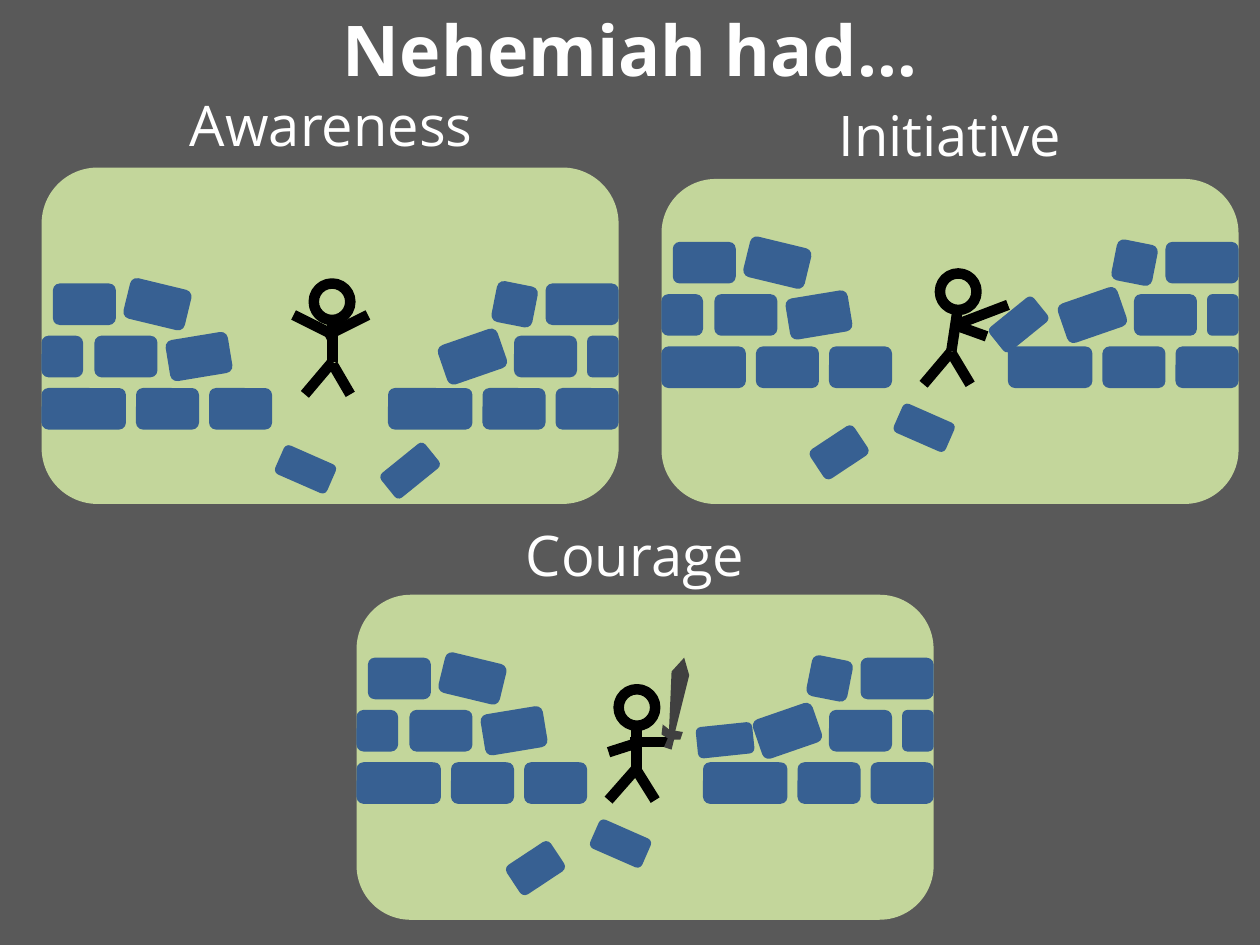
from dataclasses import dataclass

from lxml.etree import SubElement
from pptx import Presentation
from pptx.dml.color import RGBColor
from pptx.enum.shapes import MSO_CONNECTOR, MSO_SHAPE
from pptx.enum.text import PP_ALIGN
from pptx.oxml.ns import qn
from pptx.util import Inches, Pt


@dataclass(frozen=True)
class Theme:
    font: str = "Open Sans"
    title_size: int = 40
    label_size: int = 32
    limb_width: int = 6
    background: RGBColor = RGBColor(0x59, 0x59, 0x59)
    grass: RGBColor = RGBColor(0xC3, 0xD6, 0x9B)
    brick: RGBColor = RGBColor(0x37, 0x60, 0x92)
    sword: RGBColor = RGBColor(0x40, 0x40, 0x40)
    figure: RGBColor = RGBColor(0, 0, 0)
    text: RGBColor = RGBColor(0xFF, 0xFF, 0xFF)


theme = Theme()
PANEL_WIDTH = 4.58
BRICK_HEIGHT = 0.33
ROW_STEP = 0.415
HEAD_SIZE = 0.29

# Each wall row, top to bottom: left offset in the panel, width, rotation
WALL_ROWS = [
    [(0.09, 0.5, 0), (0.67, 0.5, 13.6), (3.59, 0.33, 11.2), (4, 0.58, 0)],
    [(0, 0.33, 0), (0.42, 0.5, 0), (1, 0.5, -9.4),
     (3.17, 0.5, -19.1), (3.75, 0.5, 0), (4.33, 0.25, 0)],
    [(0, 0.67, 0), (0.75, 0.5, 0), (1.33, 0.5, 0),
     (2.75, 0.67, 0), (3.5, 0.5, 0), (4.08, 0.5, 0)],
]

# Rubble: left, top, width, height, rotation. Limbs: start x, y, end x, y.
PANELS = [
    {
        "label": "Awareness", "label_at": (1.17, 0.67),
        "left": 0.33, "top": 1.33, "height": 2.67, "wall_top": 2.25,
        "rubble": [(2.2, 3.6, 0.45, 0.25, 23.7), (3.03, 3.61, 0.45, 0.25, -39)],
        "head": (2.49, 2.25),
        "limbs": [(2.42, 3.13, 2.64, 2.87), (2.64, 2.89, 2.78, 3.13),
                  (2.64, 2.87, 2.64, 2.54), (2.67, 2.67, 2.33, 2.5),
                  (2.58, 2.67, 2.92, 2.5)],
    },
    {
        "label": "Initiative", "label_at": (6.08, 0.75),
        "left": 5.25, "top": 1.42, "height": 2.58, "wall_top": 1.92,
        "rubble": [(7.11, 3.27, 0.45, 0.25, 23.7), (6.45, 3.45, 0.42, 0.28, -33.5),
                   (7.86, 2.45, 0.45, 0.25, -39)],
        "head": (7.46, 2.17),
        "limbs": [(7.33, 3.05, 7.55, 2.79), (7.55, 2.8, 7.7, 3.05),
                  (7.55, 2.79, 7.6, 2.46), (7.58, 2.58, 7.83, 2.67),
                  (7.58, 2.58, 8, 2.42)],
    },
    {
        "label": "Courage", "label_at": (3.58, 4.08),
        "left": 2.83, "top": 4.72, "height": 2.58, "wall_top": 5.22,
        "rubble": [(4.7, 6.57, 0.45, 0.25, 23.7), (4.04, 6.75, 0.42, 0.28, -33.5),
                   (5.53, 5.75, 0.45, 0.25, -6)],
        "head": (4.91, 5.47),
        "limbs": [(4.83, 6.35, 5.05, 6.1), (5.05, 6.11, 5.2, 6.35),
                  (5.05, 6.1, 5.05, 5.77), (5.08, 5.89, 4.83, 5.97),
                  (5, 5.89, 5.33, 5.89)],
    },
]

SWORD_POINTS = [
    (5.31, 5.79), (5.33, 5.33), (5.43, 5.22), (5.47, 5.36), (5.36, 5.8),
    (5.42, 5.81), (5.4, 5.87), (5.35, 5.87), (5.33, 5.95), (5.27, 5.93),
    (5.3, 5.86), (5.25, 5.83), (5.26, 5.75),
]

presentation = Presentation()
presentation.slide_width = Inches(10)
presentation.slide_height = Inches(7.5)
slide = presentation.slides.add_slide(presentation.slide_layouts[6])
shapes = slide.shapes


def add_filled(kind, left, top, width, height, color, rotation=0):
    shape = shapes.add_shape(
        kind, Inches(left), Inches(top), Inches(width), Inches(height))
    shape.rotation = rotation
    shape.shadow.inherit = False
    shape.fill.solid()
    shape.fill.fore_color.rgb = color
    shape.line.fill.background()


def add_heading(text, left, top, width, height, size, bold=False):
    box = shapes.add_textbox(
        Inches(left), Inches(top), Inches(width), Inches(height))
    box.text_frame.word_wrap = True
    paragraph = box.text_frame.paragraphs[0]
    paragraph.alignment = PP_ALIGN.CENTER
    run = paragraph.add_run()
    run.text = text
    font_format = {"name": theme.font, "size": Pt(size), "bold": bold}
    for attribute, value in font_format.items():
        setattr(run.font, attribute, value)
    run.font.color.rgb = theme.text


add_filled(MSO_SHAPE.RECTANGLE, 0, 0, 10, 7.5, theme.background)

for panel in PANELS:
    add_filled(MSO_SHAPE.ROUNDED_RECTANGLE, panel["left"], panel["top"],
               PANEL_WIDTH, panel["height"], theme.grass)
    add_heading(panel["label"], *panel["label_at"], 2.92, 0.64, theme.label_size)

    for row_number, row in enumerate(WALL_ROWS):
        top = panel["wall_top"] + row_number * ROW_STEP
        for offset, width, rotation in row:
            add_filled(MSO_SHAPE.ROUNDED_RECTANGLE, panel["left"] + offset, top,
                       width, BRICK_HEIGHT, theme.brick, rotation)
    for left, top, width, height, rotation in panel["rubble"]:
        add_filled(MSO_SHAPE.ROUNDED_RECTANGLE, left, top, width, height,
                   theme.brick, rotation)

    for limb in panel["limbs"]:
        connector = shapes.add_connector(
            MSO_CONNECTOR.STRAIGHT, *[Inches(value) for value in limb])
        connector.line.color.rgb = theme.figure
        connector.line.width = Pt(theme.limb_width)
        SubElement(connector._element.spPr, qn("a:effectLst"))

    head_left, head_top = panel["head"]
    head = shapes.add_shape(MSO_SHAPE.OVAL, Inches(head_left), Inches(head_top),
                            Inches(HEAD_SIZE), Inches(HEAD_SIZE))
    head.shadow.inherit = False
    head.fill.background()
    head.line.color.rgb = theme.figure
    head.line.width = Pt(theme.limb_width)

sword_outline = [(Inches(x), Inches(y)) for x, y in SWORD_POINTS]
builder = shapes.build_freeform(*sword_outline[0])
builder.add_line_segments(sword_outline[1:], close=True)
sword = builder.convert_to_shape()
sword.shadow.inherit = False
sword.fill.solid()
sword.fill.fore_color.rgb = theme.sword
sword.line.fill.background()

add_heading("Nehemiah had…", 0, 0, 10, 0.77, theme.title_size, bold=True)

presentation.save("out.pptx")
